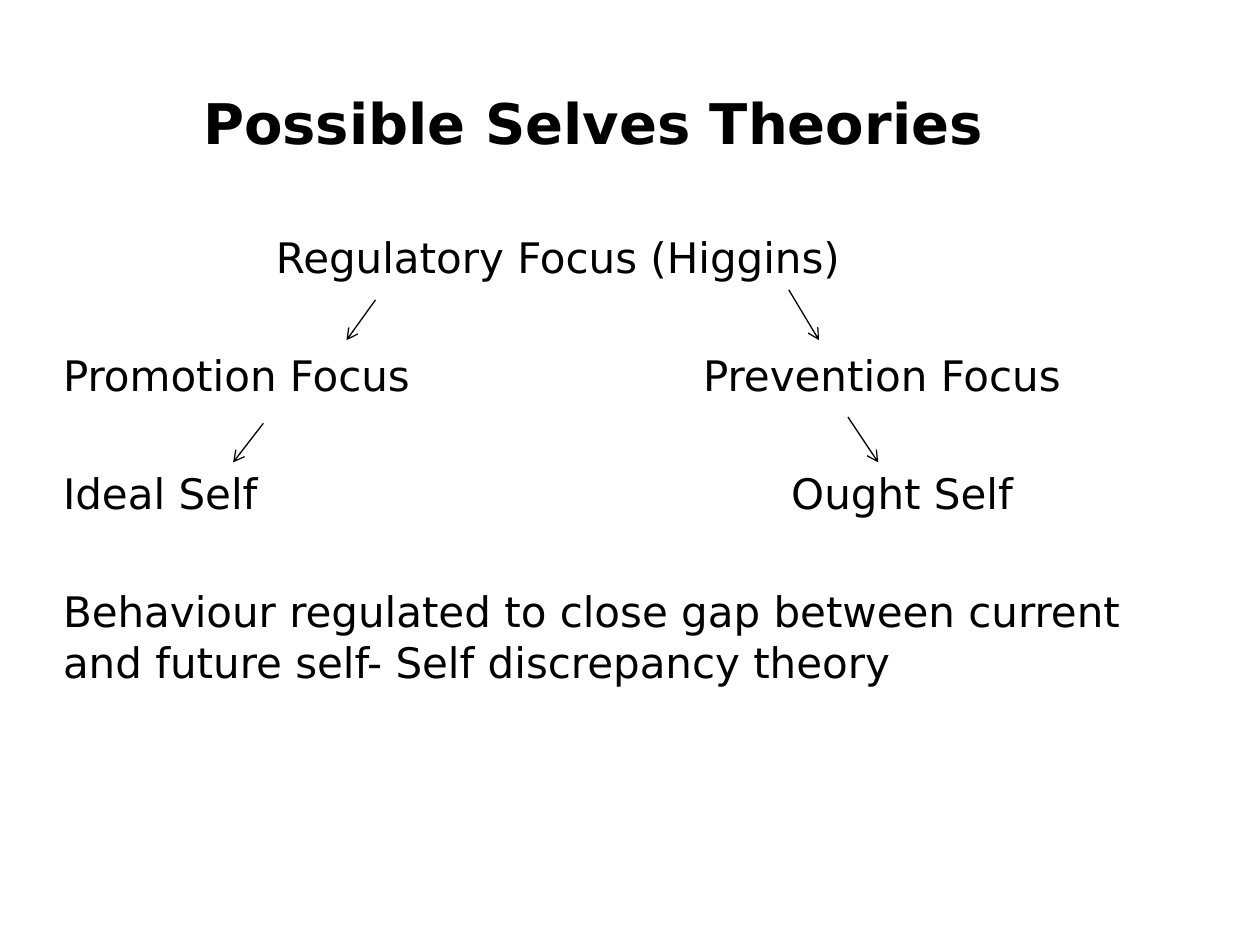
from pptx import Presentation
from pptx.dml.color import RGBColor
from pptx.enum.shapes import MSO_CONNECTOR
from pptx.enum.text import MSO_ANCHOR, PP_ALIGN
from pptx.oxml.ns import qn
from pptx.util import Inches, Pt
from lxml.etree import SubElement

THEME = {
    "font": "DejaVu Sans",
    "ink": RGBColor(0, 0, 0),
    "title_size": Pt(32),
    "body_size": Pt(24),
    "row_gap": Pt(38.6),
    "line_width": Pt(0.75),
}

TITLE = "Possible Selves Theories"
# Each column: rows of left indent and text
MAIN_COLUMN = [
    (1.69, "Regulatory Focus (Higgins)"),
    (0, "Promotion Focus"),
    (0, "Ideal Self"),
    (0, "Behaviour regulated to close gap between current "
        "and future self- Self discrepancy theory"),
]
RIGHT_COLUMN = [
    (0, "Prevention Focus"),
    (0.7, "Ought Self"),
]
# Arrows: start and end points
ARROWS = [
    ((2.98, 2.38), (2.75, 2.70)),
    ((2.09, 3.36), (1.85, 3.67)),
    ((6.26, 2.30), (6.50, 2.70)),
    ((6.73, 3.31), (6.97, 3.67)),
]

LEFT, WIDTH = 0.5, 8.42
BODY_TOP, ROW_PITCH = 1.84, 0.93
RIGHT_OFFSET = 5.08


def add_text_frame(slide, left, top, width, height):
    box = slide.shapes.add_textbox(*map(Inches, (left, top, width, height)))
    box.text_frame.word_wrap = True
    return box.text_frame


def add_run(paragraph, text, size, bold=False):
    run = paragraph.add_run()
    run.text = text
    run.font.name = THEME["font"]
    run.font.size = size
    run.font.bold = bold
    run.font.color.rgb = THEME["ink"]


def add_column(slide, rows, left, top, width, height):
    frame = add_text_frame(slide, left, top, width, height)
    frame.margin_left = frame.margin_right = 0
    frame.margin_top = frame.margin_bottom = 0
    for index, (indent, text) in enumerate(rows):
        paragraph = frame.add_paragraph() if index else frame.paragraphs[0]
        properties = paragraph._p.get_or_add_pPr()
        properties.set("marL", str(Inches(indent)))
        properties.set("indent", "0")
        if index:
            paragraph.space_before = THEME["row_gap"]
        add_run(paragraph, text, THEME["body_size"])


def add_arrow(slide, start, end):
    arrow = slide.shapes.add_connector(
        MSO_CONNECTOR.STRAIGHT, *map(Inches, start + end))
    arrow.line.color.rgb = THEME["ink"]
    arrow.line.width = THEME["line_width"]
    SubElement(arrow.line._get_or_add_ln(), qn("a:tailEnd"), type="arrow")
    SubElement(arrow._element.spPr, qn("a:effectLst"))


def main():
    presentation = Presentation()
    presentation.slide_width, presentation.slide_height = Inches(10), Inches(7.5)
    slide = presentation.slides.add_slide(presentation.slide_layouts[6])

    # Title
    frame = add_text_frame(slide, LEFT, 0.34, WIDTH, 1.25)
    frame.vertical_anchor = MSO_ANCHOR.MIDDLE
    frame.paragraphs[0].alignment = PP_ALIGN.CENTER
    add_run(frame.paragraphs[0], TITLE, THEME["title_size"], bold=True)

    # Main column, and the right column starting at its second row
    add_column(slide, MAIN_COLUMN, LEFT, BODY_TOP, WIDTH, 3.65)
    add_column(slide, RIGHT_COLUMN, LEFT + RIGHT_OFFSET, BODY_TOP + ROW_PITCH,
               WIDTH - RIGHT_OFFSET, 1.35)

    # Arrows between the rows
    for start, end in ARROWS:
        add_arrow(slide, start, end)

    presentation.save("out.pptx")


if __name__ == "__main__":
    main()
